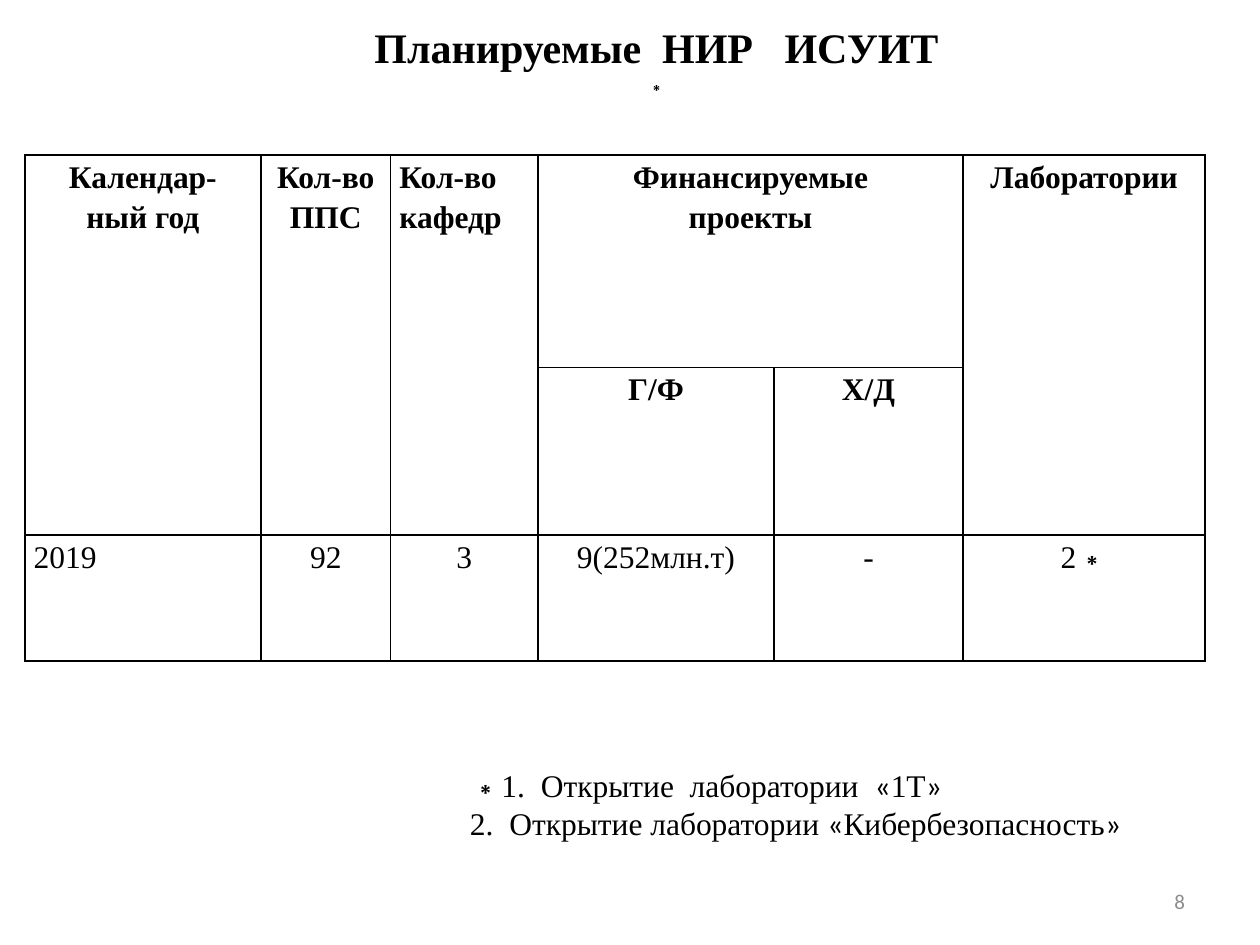
"""Build the slide with the table of planned research work."""
from dataclasses import dataclass

from lxml.etree import SubElement
from pptx import Presentation
from pptx.dml.color import RGBColor
from pptx.enum.text import MSO_ANCHOR, PP_ALIGN
from pptx.oxml.ns import qn
from pptx.util import Pt


@dataclass(frozen=True)
class Theme:
    serif: str = "Times New Roman"
    sans: str = "Calibri"
    ink: str = "000000"
    muted: str = "8C8C8C"
    title: int = 24
    body: int = 18
    small: int = 12


theme = Theme()


def write(para, text, font=theme.serif, size=theme.body, color=theme.ink,
          bold=False, align=PP_ALIGN.CENTER, spacing=None, indent=0, margin=0):
    para.alignment = align
    para.line_spacing = spacing
    properties = para._p.get_or_add_pPr()
    properties.set("marL", str(Pt(margin)))
    properties.set("indent", str(Pt(indent)))
    span = para.add_run()
    span.text = text
    span.font.name = font
    span.font.size = Pt(size)
    span.font.bold = bold
    span.font.color.rgb = RGBColor.from_string(color)


def add_box(page, left, top, width, height, anchor):
    box = page.shapes.add_textbox(Pt(left), Pt(top), Pt(width), Pt(height))
    frame = box.text_frame
    frame.word_wrap = True
    frame.vertical_anchor = anchor
    return frame


deck = Presentation()
deck.slide_width, deck.slide_height = Pt(720), Pt(540)
page = deck.slides.add_slide(deck.slide_layouts[6])

number = add_box(page, 516.25, 500.5, 168, 28.75, MSO_ANCHOR.MIDDLE)
write(number.paragraphs[0], "8", font=theme.sans, size=theme.small,
      color=theme.muted, align=PP_ALIGN.RIGHT)

column_widths = [134.9, 74.2, 84.2, 134.9, 108, 138.4]
row_heights = [121.5, 95.75, 72]
table = page.shapes.add_table(
    len(row_heights), len(column_widths), Pt(14.2), Pt(88.5),
    Pt(sum(column_widths)), Pt(sum(row_heights))).table
table.first_row = table.horz_banding = False
for column, width in zip(table.columns, column_widths):
    column.width = Pt(width)
for row, height in zip(table.rows, row_heights):
    row.height = Pt(height)

for column in (0, 1, 2, 5):
    table.cell(0, column).merge(table.cell(1, column))
table.cell(0, 3).merge(table.cell(0, 4))

rows = [
    ["Календар-\nный год", "Кол-во\nППС", "Кол-во кафедр",
     "Финансируемые\nпроекты", "", "Лаборатории"],
    ["", "", "", "Г/Ф", "Х/Д", ""],
    ["2019", "92", "3", "9(252млн.т)", "-", "2∗"],
]
left_aligned = {(0, 2), (2, 0)}
for row, texts in enumerate(rows):
    for column, text in enumerate(texts):
        cell = table.cell(row, column)
        cell.margin_left = cell.margin_right = Pt(5)
        cell.margin_top = cell.margin_bottom = Pt(0)
        properties = cell._tc.get_or_add_tcPr()
        for side in ("lnL", "lnR", "lnT", "lnB"):
            line = SubElement(properties, qn(f"a:{side}"), w=str(Pt(1)))
            fill = SubElement(line, qn("a:solidFill"))
            SubElement(fill, qn("a:srgbClr"), val=theme.ink)
        cell.fill.background()
        if not text:
            continue
        frame = cell.text_frame
        align = PP_ALIGN.LEFT if (row, column) in left_aligned else PP_ALIGN.CENTER
        for index, words in enumerate(text.split("\n")):
            para = frame.add_paragraph() if index else frame.paragraphs[0]
            write(para, words, bold=row < 2, align=align, spacing=1.15)

title = add_box(page, 65.5, 8.6, 584, 51, MSO_ANCHOR.MIDDLE)
write(title.paragraphs[0], "Планируемые  НИР   ИСУИТ", size=theme.title,
      bold=True, indent=35.4)
write(title.add_paragraph(), "∗", size=theme.small, indent=35.4)

notes = add_box(page, 105, 434, 556, 51, MSO_ANCHOR.TOP)
footnotes = [
    ("∗1.  Открытие  лаборатории  ", "1Т"),
    ("2.  Открытие лаборатории ", "Кибербезопасность"),
]
for index, (lead, name) in enumerate(footnotes):
    para = notes.add_paragraph() if index else notes.paragraphs[0]
    for text, font in ((lead, theme.serif), ("«", theme.sans),
                       (name, theme.serif), ("»", theme.sans)):
        write(para, text, font=font, align=PP_ALIGN.LEFT, margin=156.5)

deck.save("out.pptx")
